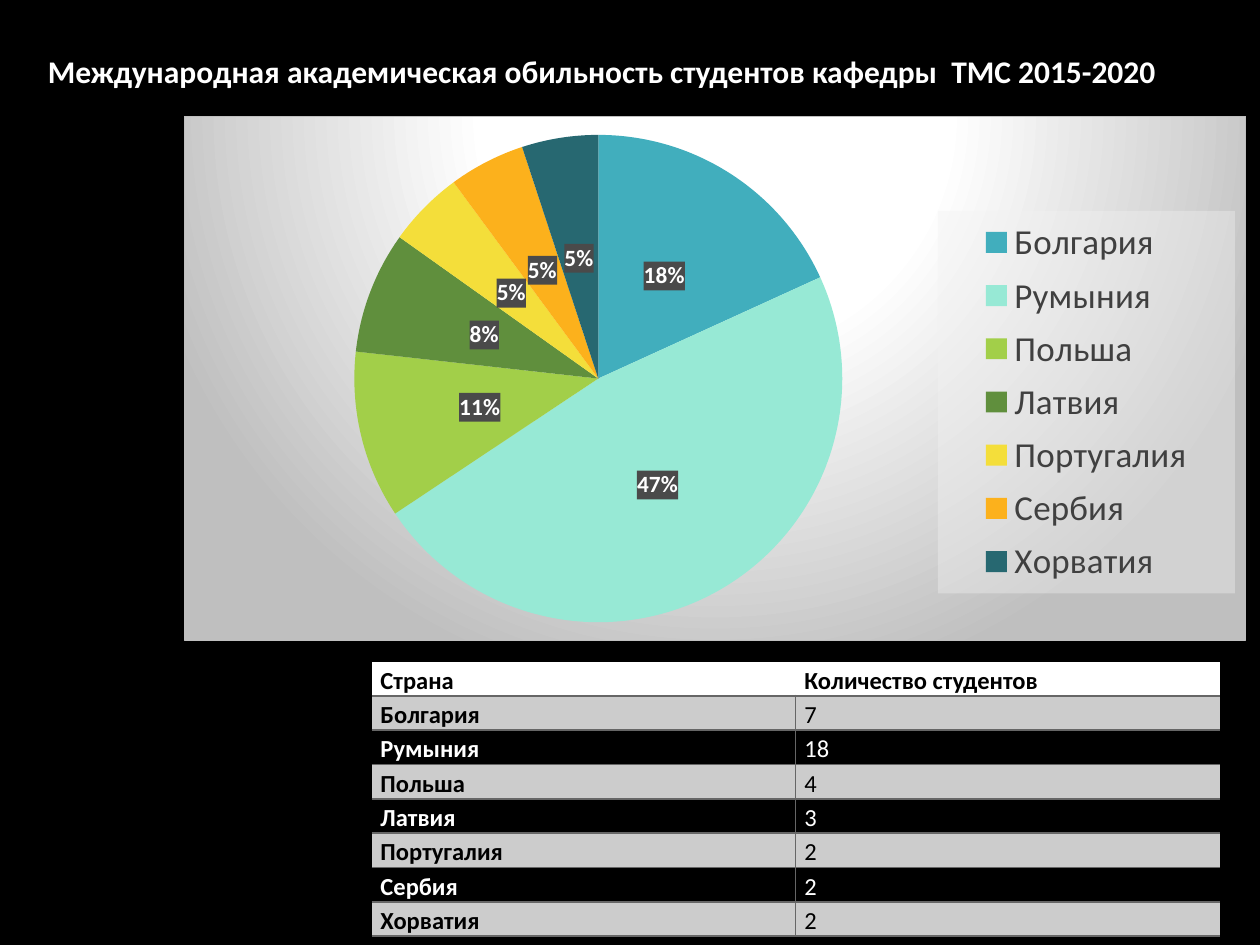
import pptx
import pptx.chart.data
import pptx.dml.color
import pptx.enum.chart
import pptx.enum.text
import pptx.oxml
import pptx.oxml.ns
import pptx.util

NS = pptx.oxml.ns.nsdecls("a", "c")
qn = pptx.oxml.ns.qn
GREY = "666666"

COUNTRIES = ["Болгария", "Румыния", "Польша", "Латвия", "Португалия", "Сербия", "Хорватия"]
SHARES = [18, 47, 11, 8, 5, 5, 5]
STUDENTS = [7, 18, 4, 3, 2, 2, 2]
SLICE_COLORS = ["41AEBD", "97E9D5", "A2CF49", "608F3D", "F4DE3A", "FCB11C", "276871"]


def rgb(value):
    return pptx.dml.color.RGBColor.from_string(value)


def xml(text):
    """Build an element from a fragment whose root tag holds the mark NS."""
    return pptx.oxml.parse_xml(text.replace("NS", NS, 1))


def solid_sp_pr(color, alpha=100):
    return xml(f'<c:spPr NS><a:solidFill><a:srgbClr val="{color}"><a:alpha val="{alpha * 1000}"/>'
               '</a:srgbClr></a:solidFill></c:spPr>')


def manual_layout(x, y, w, h, inner=False):
    """Place a part of a chart by shares of the chart's size."""
    target = '<c:layoutTarget val="inner"/>' if inner else ""
    sizes = "".join(f'<c:{k} val="{v}"/>' for k, v in zip("xywh", (x, y, w, h)))
    return xml(f'<c:layout NS><c:manualLayout>{target}<c:xMode val="edge"/><c:yMode val="edge"/>'
               f'{sizes}</c:manualLayout></c:layout>')


def drop_layout(element):
    for old in element.findall(qn("c:layout")):
        element.remove(old)


class Deck:
    """Holds the style and the current slide; places are shares of the slide's size."""

    def __init__(self, prs, font="Calibri", ink="FFFFFF", paper="000000"):
        self.prs, self.font_name, self.ink = prs, font, ink
        self.s = prs.slides.add_slide(prs.slide_layouts[5])
        self.s.background.fill.solid()
        self.s.background.fill.fore_color.rgb = rgb(paper)

    def box(self, x, y, w, h):
        width, height = self.prs.slide_width, self.prs.slide_height
        return [int(v) for v in (x * width, y * height, w * width, h * height)]

    def style(self, font, size, color=None, bold=False):
        values = {"name": self.font_name, "size": pptx.util.Pt(size), "bold": bold}
        for key, value in values.items():
            setattr(font, key, value)
        font.color.rgb = rgb(color or self.ink)

    def put_text(self, tf, text, size, color=None, bold=False):
        p = tf.paragraphs[0]
        values = {"alignment": pptx.enum.text.PP_ALIGN.LEFT, "line_spacing": 1.15,
                  "space_before": 0, "space_after": pptx.util.Pt(10)}
        for key, value in values.items():
            setattr(p, key, value)
        r = p.add_run()
        r.text = text
        self.style(r.font, size, color, bold)

    def title(self, text, place):
        sp = self.s.shapes.title
        for key, value in zip(("left", "top", "width", "height"), self.box(*place)):
            setattr(sp, key, value)
        values = {"word_wrap": True, "vertical_anchor": pptx.enum.text.MSO_ANCHOR.TOP,
                  "auto_size": pptx.enum.text.MSO_AUTO_SIZE.SHAPE_TO_FIT_TEXT}
        for key, value in values.items():
            setattr(sp.text_frame, key, value)
        self.put_text(sp.text_frame, text, 18, bold=True)

    def pie(self, categories, values, colors, place):
        data = pptx.chart.data.CategoryChartData()
        data.categories = categories
        data.add_series("Series 1", values)
        kind = pptx.enum.chart.XL_CHART_TYPE.PIE
        chart = self.s.shapes.add_chart(kind, *self.box(*place), data).chart
        self.style(chart.font, 10)
        chart.has_title = False
        plot = chart.plots[0]
        plot.vary_by_categories = True
        series = plot.series[0]
        for i, color in enumerate(colors):
            fill = series.points[i].format.fill
            fill.solid()
            fill.fore_color.rgb = rgb(color)
        self.pie_labels(series.data_labels)
        self.pie_legend(chart)

        body = chart._chartSpace.find(qn("c:chart"))
        area = body.find(qn("c:plotArea"))
        drop_layout(area)
        area.insert(0, manual_layout(0.16, 0.03, 0.46, 0.94, inner=True))
        stops = "".join(f'<a:gs pos="{pos * 1000}"><a:srgbClr val="{color}"/></a:gs>'
                        for pos, color in ((0, "FFFFFF"), (39, "FFFFFF"), (100, "BFBFBF")))
        body.addnext(xml(
            f'<c:spPr NS><a:gradFill><a:gsLst>{stops}</a:gsLst><a:path path="circle">'
            '<a:fillToRect l="50000" t="-80000" r="50000" b="180000"/></a:path></a:gradFill>'
            '<a:ln w="9525"><a:solidFill><a:srgbClr val="BFBFBF"/></a:solidFill></a:ln></c:spPr>'))

    def pie_labels(self, labels):
        values = {"show_percentage": True, "show_value": False, "number_format": "0%",
                  "number_format_is_linked": False,
                  "position": pptx.enum.chart.XL_LABEL_POSITION.CENTER}
        for key, value in values.items():
            setattr(labels, key, value)
        self.style(labels.font, 13.3, bold=True)
        labels._element.find(qn("c:txPr")).addprevious(solid_sp_pr("4A4A4A"))

    def pie_legend(self, chart):
        chart.has_legend = True
        legend = chart.legend
        legend.position = pptx.enum.chart.XL_LEGEND_POSITION.RIGHT
        legend.include_in_layout = False
        self.style(legend.font, 20, "404040")
        element = legend._element
        drop_layout(element)
        element.find(qn("c:legendPos")).addnext(manual_layout(0.71, 0.18, 0.28, 0.73))
        element.find(qn("c:txPr")).addprevious(solid_sp_pr("F2F2F2", 39))

    def borders(self, cell, widths):
        """Draw the sides named in widths (points) and clear the others."""
        tc_pr = cell._tc.get_or_add_tcPr()
        for side in "LRTB":
            width = widths.get(side, 0)
            paint = (f'<a:solidFill><a:srgbClr val="{GREY}"/></a:solidFill>' if width
                     else "<a:noFill/>")
            tc_pr.append(xml(f'<a:ln{side} NS w="{int(width * 12700)}">{paint}</a:ln{side}>'))

    def table(self, rows, place):
        table = self.s.shapes.add_table(len(rows), len(rows[0]), *self.box(*place)).table
        table.first_row = table.horz_banding = False
        for i, row in enumerate(rows):
            header, dark = i == 0, i > 0 and i % 2 == 0
            for j, text in enumerate(row):
                cell = table.cell(i, j)
                margins = {"margin_left": 0.07, "margin_right": 0.07,
                           "margin_top": 0, "margin_bottom": 0}
                for key, value in margins.items():
                    setattr(cell, key, pptx.util.Inches(value))
                widths = {"B": 1.5 if header else 1}
                if not header:
                    widths.update({"T": 1.5 if i == 1 else 1, "L" if j else "R": 1})
                self.borders(cell, widths)
                if dark:
                    cell.fill.background()
                else:
                    cell.fill.solid()
                    cell.fill.fore_color.rgb = rgb("FFFFFF" if header else "CCCCCC")
                self.put_text(cell.text_frame, str(text), 14,
                              "FFFFFF" if dark else "000000", bold=header or j == 0)


def main():
    prs = pptx.Presentation()
    prs.slide_width, prs.slide_height = pptx.util.Inches(10), pptx.util.Inches(7.5)
    deck = Deck(prs)
    deck.title("Международная академическая обильность студентов кафедры  ТМС 2015-2020",
               (0.028, 0.32 / 7.5, 0.972, 0.06))
    deck.pie(COUNTRIES, SHARES, SLICE_COLORS, (0.146, 0.92 / 7.5, 0.843, 4.17 / 7.5))
    deck.table([("Страна", "Количество студентов"), *zip(COUNTRIES, STUDENTS)],
               (0.295, 0.7, 0.673, 2.18 / 7.5))
    prs.save("out.pptx")


if __name__ == "__main__":
    main()
